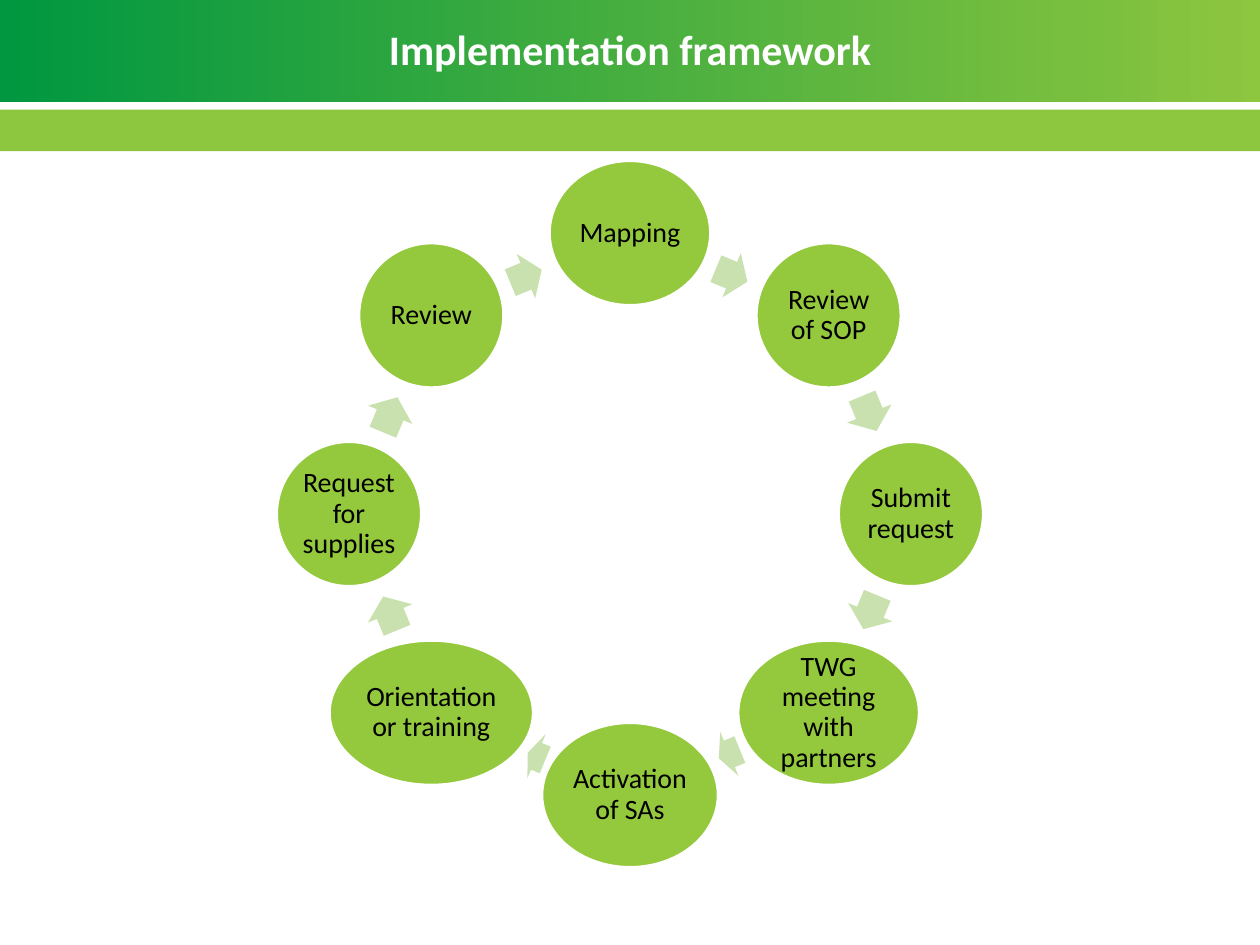
from copy import deepcopy
from math import cos, radians, sin

from pptx import Presentation
from pptx.dml.color import RGBColor
from pptx.enum.shapes import MSO_SHAPE
from pptx.enum.text import MSO_ANCHOR, PP_ALIGN
from pptx.util import Inches, Pt

FONT = "Calibri"
WHITE = RGBColor(0xFF, 0xFF, 0xFF)
BLACK = RGBColor(0x00, 0x00, 0x00)
DARK_GREEN = RGBColor(0x00, 0x97, 0x40)
MID_GREEN = RGBColor(0x78, 0xBF, 0x3F)
LIME = RGBColor(0x8D, 0xC6, 0x3F)
NODE_GREEN = RGBColor(0x95, 0xC9, 0x3D)
ARROW_GREEN = RGBColor(0xC8, 0xE1, 0xAF)

NODE_HEIGHT = 1.14
ARROW_HEIGHT = 0.38
# Step label, node width, length of the arrow after it, arrow shift along its direction
STEPS = [
    ("Mapping", 1.27, 0.27, 0.02),
    ("Review of SOP", 1.14, 0.30, -0.01),
    ("Submit request", 1.14, 0.29, -0.01),
    ("TWG meeting with partners", 1.43, 0.18, 0),
    ("Activation of SAs", 1.39, 0.15, -0.05),
    ("Orientation or training", 1.61, 0.29, 0),
    ("Request for supplies", 1.14, 0.30, 0),
    ("Review", 1.14, 0.27, -0.04),
]


def add_filled_shape(slide, kind, left, top, width, height, color):
    shape = slide.shapes.add_shape(
        kind, Inches(left), Inches(top), Inches(width), Inches(height))
    shape.shadow.inherit = False
    shape.fill.solid()
    shape.fill.fore_color.rgb = color
    shape.line.fill.background()
    return shape


def format_text(text_frame, size, color, bold=False):
    text_frame.word_wrap = True
    text_frame.vertical_anchor = MSO_ANCHOR.MIDDLE
    paragraph = text_frame.paragraphs[0]
    paragraph.alignment = PP_ALIGN.CENTER
    paragraph.line_spacing = 0.9
    font = paragraph.runs[0].font
    font.name, font.size, font.bold = FONT, Pt(size), bold
    font.color.rgb = color


def set_band_gradient(shape):
    shape.fill.gradient()
    shape.fill.gradient_angle = 0
    stop_list = shape.fill._fill._gradFill.gsLst
    stop_list.append(deepcopy(stop_list[-1]))
    colors = ((0, DARK_GREEN), (0.85, MID_GREEN), (1, LIME))
    for stop, (position, color) in zip(shape.fill.gradient_stops, colors):
        stop.position = position
        stop.color.rgb = color


def add_header(slide, left, top, width):
    # Bands, placed behind the title
    upper_band = add_filled_shape(
        slide, MSO_SHAPE.RECTANGLE, left, top - 0.1, width, 0.91, LIME)
    set_band_gradient(upper_band)
    lower_band = add_filled_shape(
        slide, MSO_SHAPE.RECTANGLE, left, top + 0.87, width, 0.33, LIME)

    title = slide.shapes.title
    for band in (upper_band, lower_band):
        title._element.addprevious(band._element)

    # Title, raised into the upper band by its bottom margin
    title.left, title.top = Inches(left + 0.33), Inches(top + 0.12)
    title.width, title.height = Inches(width - 0.66), Inches(1.02)
    title.text_frame.text = "Implementation framework"
    title.text_frame.margin_bottom = Inches(0.48)
    format_text(title.text_frame, 24, WHITE, bold=True)


def add_node(slide, center_x, center_y, width, label):
    node = add_filled_shape(
        slide, MSO_SHAPE.OVAL, center_x - width / 2, center_y - NODE_HEIGHT / 2,
        width, NODE_HEIGHT, NODE_GREEN)
    node.line.color.rgb = WHITE
    node.line.width = Pt(1)
    text_frame = node.text_frame
    text_frame.text = label
    text_frame.margin_left = text_frame.margin_right = Inches(0.02)
    text_frame.margin_top = text_frame.margin_bottom = Inches(0.02)
    format_text(text_frame, 16, BLACK)


def add_arrow(slide, center_x, center_y, length, rotation):
    arrow = add_filled_shape(
        slide, MSO_SHAPE.RIGHT_ARROW, center_x - length / 2,
        center_y - ARROW_HEIGHT / 2, length, ARROW_HEIGHT, ARROW_GREEN)
    arrow.adjustments[0] = 0.6
    arrow.adjustments[1] = 0.5
    arrow.rotation = rotation


def add_cycle(slide, left, top, size):
    radius = (size - NODE_HEIGHT) / 2
    center_x, center_y = left + size / 2, top + size / 2
    step_angle = 360 / len(STEPS)
    # Arrows sit on the middle of the chord between two nodes
    arrow_radius = radius * cos(radians(step_angle / 2))

    for index, (label, width, length, shift) in enumerate(STEPS):
        angle = radians(index * step_angle - 90)
        add_node(slide, center_x + radius * cos(angle),
                 center_y + radius * sin(angle), width, label)

        rotation = (index + 0.5) * step_angle
        heading = radians(rotation)
        add_arrow(slide,
                  center_x + arrow_radius * sin(heading) + shift * cos(heading),
                  center_y - arrow_radius * cos(heading) + shift * sin(heading),
                  length, rotation)


def main():
    presentation = Presentation()
    presentation.slide_width = Inches(10)
    presentation.slide_height = Inches(7.5)
    slide = presentation.slides.add_slide(presentation.slide_layouts[5])
    add_header(slide, 0, 0, 10)
    add_cycle(slide, 2.2, 1.28, 5.6)
    presentation.save("out.pptx")


if __name__ == "__main__":
    main()
